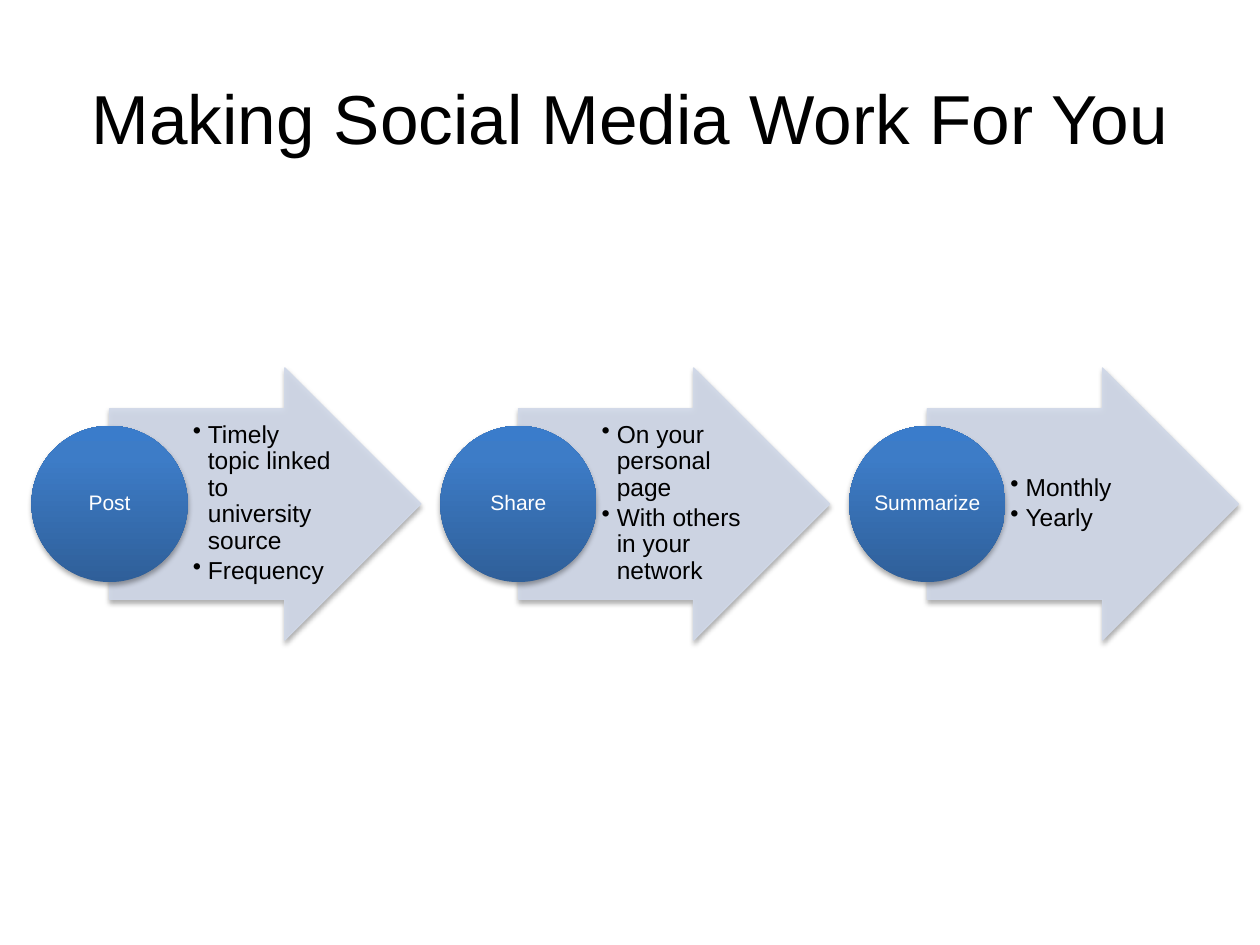
from dataclasses import dataclass

from pptx import Presentation
from pptx import util as u
from pptx.dml import color
from pptx.enum import shapes, text
from pptx.oxml import parse_xml
from pptx.oxml import ns

HUES = {"ink": "000000", "pale": "D0D8E8", "white": "FFFFFF",
        "low": "2F5F99", "mid": "3D7CC7", "high": "3A7CCB"}
FONT = "Arial"
STEP = 3.245  # distance from one stage to the next


@dataclass
class Stage:
    name: str
    points: list[str]


STAGES = [
    Stage("Post", ["Timely topic linked to university source", "Frequency"]),
    Stage("Share", ["On your personal page", "With others in your network"]),
    Stage("Summarize", ["Monthly", "Yearly"]),
]


def rgb(hue: str) -> color.RGBColor:
    return color.RGBColor.from_string(HUES[hue])


def node(xml: str):
    """Make an element in the drawing namespace."""
    return parse_xml(xml.replace(" ", f" {ns.nsdecls('a')} ", 1))


def style(run, size: float, hue: str) -> None:
    for key, val in {"name": FONT, "size": u.Pt(size)}.items():
        setattr(run.font, key, val)
    run.font.color.rgb = rgb(hue)


def add_form(slide, kind, x: float, y: float, w: float, h: float):
    """Add a preset shape with a soft shadow below it."""
    form = slide.shapes.add_shape(kind, *map(u.Inches, (x, y, w, h)))
    form.shadow.inherit = False
    form._element.spPr.find(ns.qn("a:effectLst")).append(node(
        '<a:outerShdw blurRad="39370" dist="22860" dir="5400000" rotWithShape="0">'
        '<a:srgbClr val="000000"><a:alpha val="35000"/></a:srgbClr></a:outerShdw>'))
    return form


def add_arrow(slide, x: float) -> None:
    form = add_form(slide, shapes.MSO_SHAPE.RIGHT_ARROW, x, 2.92, 2.47, 2.16)
    form.adjustments[0], form.adjustments[1] = 0.7, 0.5
    form.fill.solid()
    form.fill.fore_color.rgb = rgb("pale")
    form.line.color.rgb = rgb("pale")
    form.line.width = u.Pt(0.75)
    for tone in form._element.spPr.findall(".//" + ns.qn("a:solidFill")):
        tone[0].append(node('<a:alpha val="90000"/>'))


def add_disc(slide, x: float) -> None:
    form = add_form(slide, shapes.MSO_SHAPE.OVAL, x, 3.38, 1.24, 1.24)
    form.line.fill.background()
    form.fill.gradient()
    form.fill.gradient_angle = 90
    stops = form._element.spPr.find(".//" + ns.qn("a:gsLst"))
    for stop in list(stops):
        stops.remove(stop)
    for pos, hue in ((0, "low"), (80, "mid"), (100, "high")):
        stops.append(node(f'<a:gs pos="{pos * 1000}">'
                          f'<a:srgbClr val="{HUES[hue]}"/></a:gs>'))


def add_text(slide, at: tuple, pads: tuple, lines: list[str], size: float,
             hue: str, after: float, listed: bool = False) -> None:
    box = slide.shapes.add_textbox(*map(u.Inches, at))
    frame = box.text_frame
    look = {"word_wrap": True, "vertical_anchor": text.MSO_ANCHOR.MIDDLE}
    look |= {f"margin_{side}": u.Inches(pad) for side, pad in
             zip(("left", "top", "right", "bottom"), pads)}
    for key, val in look.items():
        setattr(frame, key, val)
    for i, line in enumerate(lines):
        para = frame.paragraphs[0] if i == 0 else frame.add_paragraph()
        if listed:
            props = para._p.get_or_add_pPr()
            props.set("marL", str(u.Inches(0.12)))
            props.set("indent", str(-u.Inches(0.12)))
            props.append(node('<a:buChar char="•"/>'))
        else:
            para.alignment = text.PP_ALIGN.CENTER
        para.line_spacing = 0.9
        para.space_after = u.Pt(after)
        run = para.add_run()
        run.text = line
        style(run, size, hue)


def add_stage(slide, x: float, stage: Stage) -> None:
    add_arrow(slide, x + 0.62)
    add_text(slide, (x + 1.24, 3.24, 1.2, 1.51), (0.04, 0.01, 0.02, 0.01),
             stage.points, 14, "ink", 2.1, listed=True)
    add_disc(slide, x)
    add_text(slide, (x + 0.185, 3.56, 0.87, 0.87), (0.01,) * 4,
             [stage.name], 12, "white", 4.2)


def main() -> None:
    deck = Presentation()
    deck.slide_width, deck.slide_height = u.Inches(10), u.Inches(7.5)
    slide = deck.slides.add_slide(deck.slide_layouts[5])

    # Title
    title = slide.shapes.title
    for key, val in {"left": 0.5, "top": 0.3, "width": 9, "height": 1.25}.items():
        setattr(title, key, u.Inches(val))
    frame = title.text_frame
    frame.text = "Making Social Media Work For You"
    frame.vertical_anchor = text.MSO_ANCHOR.MIDDLE
    frame.paragraphs[0].alignment = text.PP_ALIGN.CENTER
    style(frame.paragraphs[0].runs[0], 39.6, "ink")

    # Three stages, left to right
    for i, stage in enumerate(STAGES):
        add_stage(slide, 0.25 + i * STEP, stage)

    deck.save("out.pptx")


if __name__ == "__main__":
    main()
